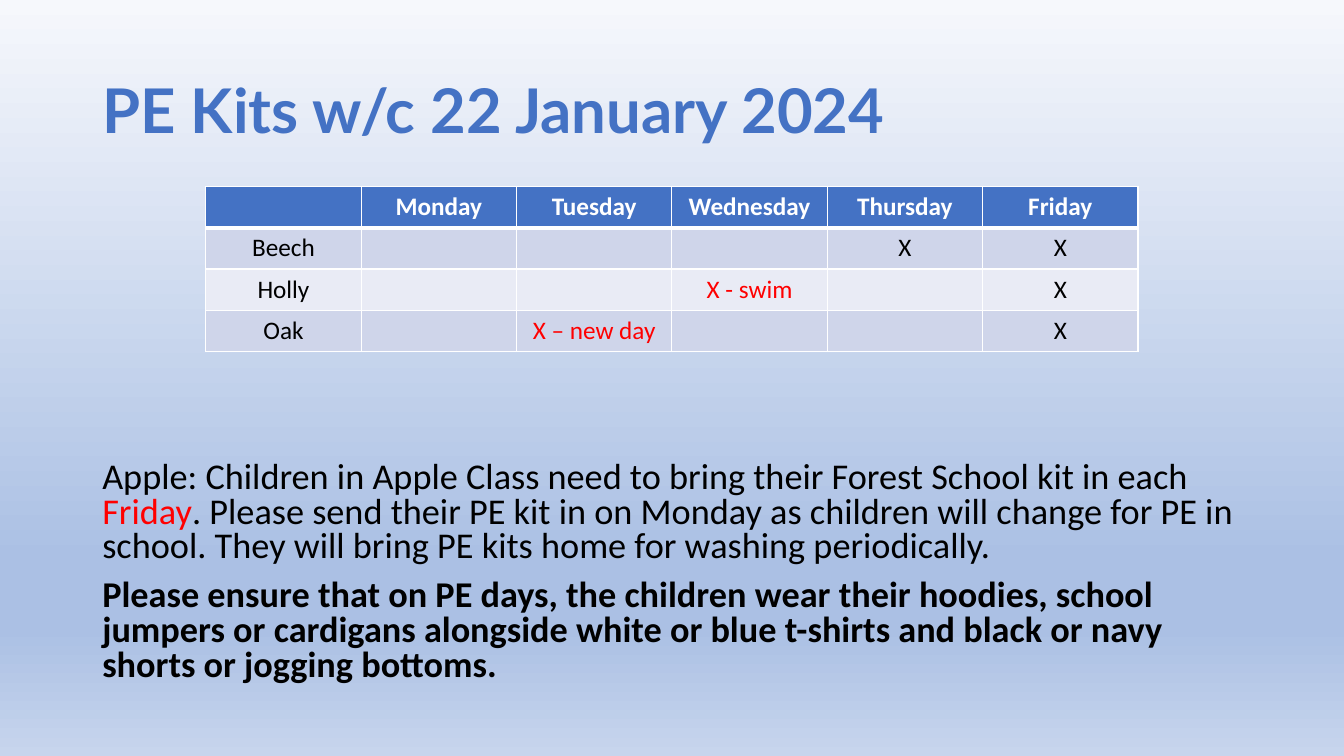
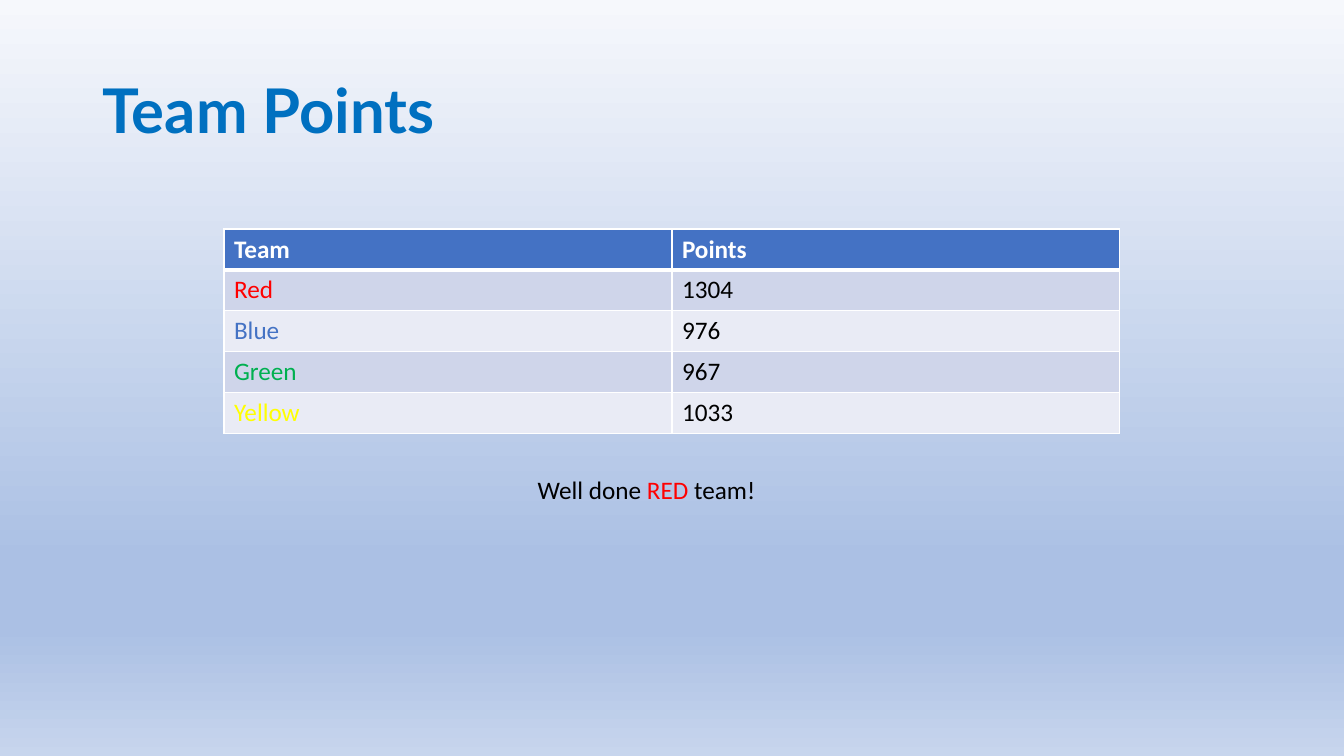
"""Builds the PE kit and team points slides."""
from typing import NamedTuple

from lxml import etree
from pptx import Presentation
from pptx.dml.color import RGBColor
from pptx.enum.text import MSO_ANCHOR, PP_ALIGN
from pptx.oxml.ns import qn
from pptx.util import Pt

LEFT, CENTER = PP_ALIGN.LEFT, PP_ALIGN.CENTER
MIDDLE = MSO_ANCHOR.MIDDLE

BODY, HEAD = "Calibri", "Lato"
WHITE, BLACK, RED = "FFFFFF", "000000", "FF0000"
BLUE, SKY, GREEN, YELLOW = "4472C4", "0070C0", "00B050", "FFFF00"
BANDS = ("CFD5EA", "E9EBF5")
STOPS = ((0, "F6F8FC"), (74, "ABC0E4"), (83, "ABC0E4"), (100, "C7D5ED"))


class Bit(NamedTuple):
    """A piece of text in one style."""
    text: str
    hue: str = BLACK
    bold: bool = False


class Box(NamedTuple):
    """A place on the slide, in points."""
    left: float
    top: float
    width: float
    height: float

    def lengths(self) -> tuple:
        """Return the four sides as lengths."""
        return tuple(Pt(side) for side in self)


class Grid(NamedTuple):
    """A table with a header row and equal columns."""
    box: Box
    align: PP_ALIGN
    rows: list


TITLE = Box(66, 28.8, 828, 104.4)


def color(hue: str) -> RGBColor:
    """Turn a hex string into a colour."""
    return RGBColor.from_string(hue)


def style(run, bit: Bit, size: float, face: str = BODY) -> None:
    """Format one run."""
    font = run.font
    font.name, font.size, font.bold = face, Pt(size), bit.bold
    font.color.rgb = color(bit.hue)


def write(para, bits: list, size: float) -> None:
    """Fill a paragraph with styled runs."""
    for bit in bits:
        run = para.add_run()
        run.text = bit.text
        style(run, bit, size)


def paint(master) -> None:
    """Give the master its gradient background."""
    fill = master.background.fill
    fill.gradient()
    fill.gradient_angle = 270
    stops = master.element.xpath(".//p:bgPr//a:gsLst")[0]
    for old in list(stops):
        stops.remove(old)
    for place, hue in STOPS:
        stop = etree.SubElement(stops, qn("a:gs"), pos=str(place * 1000))
        etree.SubElement(stop, qn("a:srgbClr"), val=hue)


def add_slide(deck, text: str, hue: str):
    """Add a slide with its title."""
    slide = deck.slides.add_slide(deck.slide_layouts[5])
    title = slide.shapes.title
    title.left, title.top, title.width, title.height = TITLE.lengths()
    frame = title.text_frame
    frame.text = text
    frame.vertical_anchor = MIDDLE
    para = frame.paragraphs[0]
    para.alignment, para.line_spacing = LEFT, 0.9
    style(para.runs[0], Bit(text, hue, True), 44, HEAD)
    return slide


def edge(cell, side: str, width: float) -> None:
    """Draw one white cell border."""
    line = etree.SubElement(cell._tc.get_or_add_tcPr(), qn(f"a:ln{side}"), w=str(Pt(width)))
    fill = etree.SubElement(line, qn("a:solidFill"))
    etree.SubElement(fill, qn("a:srgbClr"), val=WHITE)


def add_grid(slide, grid: Grid) -> None:
    """Draw a banded table."""
    count, wide = len(grid.rows), len(grid.rows[0])
    table = slide.shapes.add_table(count, wide, *grid.box.lengths()).table
    for column in table.columns:
        column.width = Pt(grid.box.width / wide)
    for y, row in enumerate(grid.rows):
        table.rows[y].height = Pt(grid.box.height / count)
        for x, bit in enumerate(row):
            cell = table.cell(y, x)
            for side in "LRTB":
                thick = (y, side) in ((0, "B"), (1, "T"))
                edge(cell, side, 3 if thick else 1)
            cell.fill.solid()
            cell.fill.fore_color.rgb = color(BANDS[(y - 1) % 2] if y else BLUE)
            para = cell.text_frame.paragraphs[0]
            para.alignment = grid.align
            if bit.text:
                write(para, [bit], 18)


def add_text(slide, box: Box, paras: list, size: float, pitch: float = 1, gap: float = 0) -> None:
    """Add a text box of styled paragraphs."""
    frame = slide.shapes.add_textbox(*box.lengths()).text_frame
    frame.word_wrap = True
    for i, bits in enumerate(paras):
        para = frame.add_paragraph() if i else frame.paragraphs[0]
        para.line_spacing = pitch
        para.space_before = Pt(gap if i else 0)
        write(para, bits, size)


def heads(*names: str) -> list:
    """Make a header row."""
    return [Bit(name, WHITE, True) for name in names]


def add_kits(deck) -> None:
    """Build the PE kit slide."""
    slide = add_slide(deck, "PE Kits w/c 22 January 2024", BLUE)
    none, mark = Bit(""), Bit("X")
    add_text(slide, Box(66, 326, 828, 160), [
        [Bit("Apple: Children in Apple Class need to bring their Forest School kit in each "),
         Bit("Friday", RED),
         Bit(". Please send their PE kit in on Monday as children will change for PE in school. "
             "They will bring PE kits home for washing periodically.")],
        [Bit("Please ensure that on PE days, the children wear their hoodies, school jumpers "
             "or cardigans alongside white or blue t-shirts and black or navy shorts or "
             "jogging bottoms.", bold=True)],
    ], 25.9, 0.8, 10)
    add_grid(slide, Grid(Box(147, 133.2, 666, 118), CENTER, [
        heads("", "Monday", "Tuesday", "Wednesday", "Thursday", "Friday"),
        [Bit("Beech"), none, none, none, mark, mark],
        [Bit("Holly"), none, none, Bit("X - swim", RED), none, mark],
        [Bit("Oak"), none, Bit("X – new day", RED), none, none, mark],
    ]))


def add_points(deck) -> None:
    """Build the team points slide."""
    slide = add_slide(deck, "Team Points", SKY)
    add_grid(slide, Grid(Box(160, 163.6, 640, 146), LEFT, [
        heads("Team", "Points"),
        [Bit("Red", RED), Bit("1304")],
        [Bit("Blue", BLUE), Bit("976")],
        [Bit("Green", GREEN), Bit("967")],
        [Bit("Yellow", YELLOW), Bit("1033")],
    ]))
    add_text(slide, Box(377, 335, 205, 29),
             [[Bit("Well done "), Bit("RED", RED), Bit(" team!")]], 18)


def main() -> None:
    """Build and save the deck."""
    deck = Presentation()
    deck.slide_width, deck.slide_height = Pt(960), Pt(540)
    paint(deck.slide_master)
    add_kits(deck)
    add_points(deck)
    deck.save("out.pptx")


if __name__ == "__main__":
    main()
